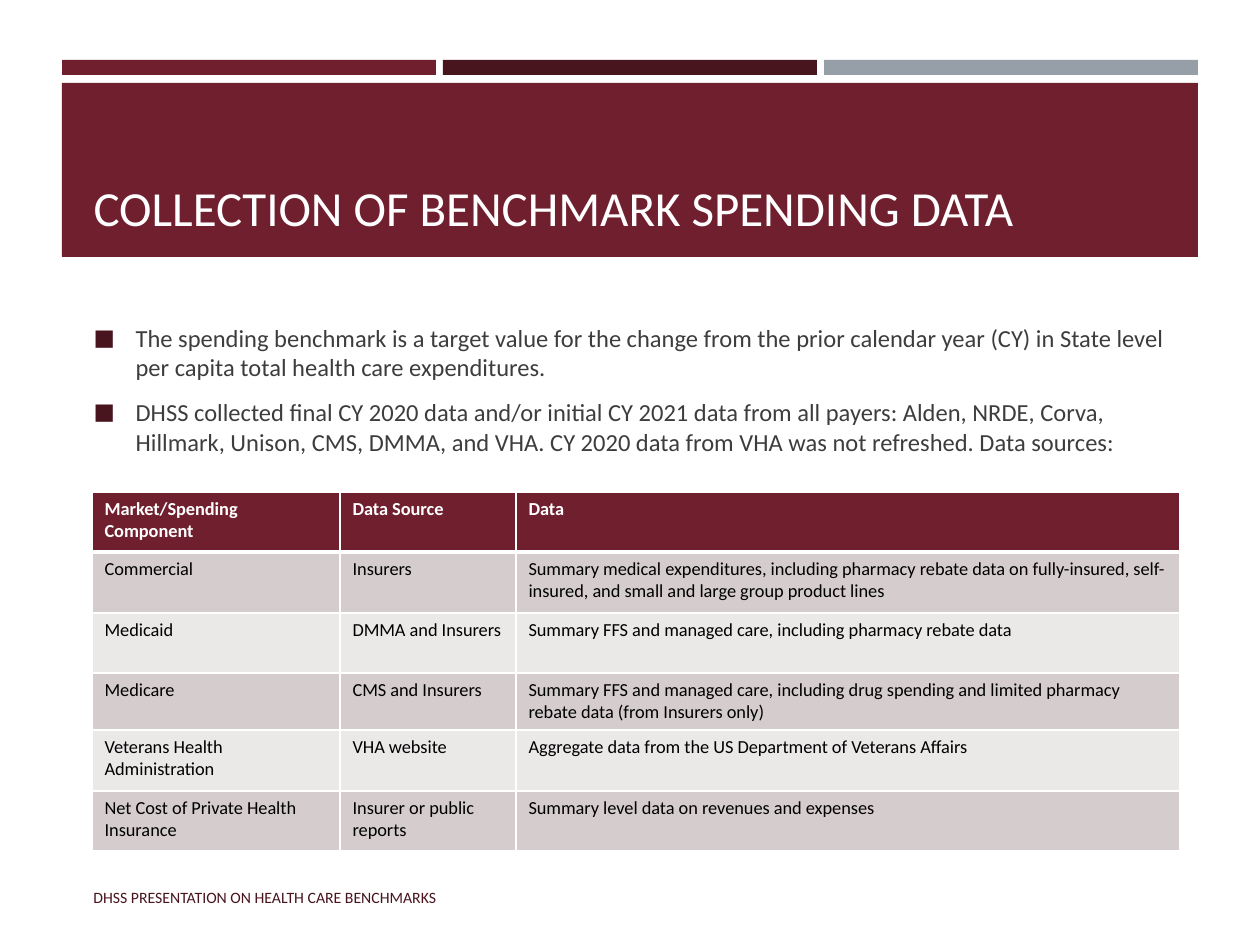
"""Build the slide on collection of benchmark spending data."""
from typing import NamedTuple

from lxml.etree import SubElement as Sub
from pptx import Presentation
from pptx.dml.color import RGBColor as Rgb
from pptx.enum.shapes import MSO_SHAPE as Kind
from pptx.enum.text import MSO_ANCHOR as Anchor, MSO_AUTO_SIZE as Fit, PP_ALIGN as Align
from pptx.oxml.ns import qn
from pptx.util import Emu, Pt

HUES = {
    "wine": "6F1F2E", "dark": "48141E", "gray": "969FA7", "white": "FFFFFF",
    "ink": "3D3D3D", "black": "000000", "odd": "D5CDCD", "even": "EBE8E8",
}
FONT = "Calibri"
LEFT, WIDE, GAP, BAR = 62, 1136, 7, 374
COLS = (248, 176, 664)
ROWS = (60, 61, 60, 57, 61, 60)
POINTS = (
    "The spending benchmark is a target value for the change from the prior "
    "calendar year (CY) in State level per capita total health care expenditures.",
    "DHSS collected final CY 2020 data and/or initial CY 2021 data from all payers: "
    "Alden, NRDE, Corva, Hillmark, Unison, CMS, DMMA, and VHA. "
    "CY 2020 data from VHA was not refreshed. Data sources:",
)


class Box(NamedTuple):
    x: int
    y: int
    w: int
    h: int


class Source(NamedTuple):
    market: str
    origin: str
    data: str


TABLE = (
    Source("Market/Spending Component", "Data Source", "Data"),
    Source("Commercial", "Insurers",
           "Summary medical expenditures, including pharmacy rebate data on "
           "fully-insured, self-insured, and small and large group product lines"),
    Source("Medicaid", "DMMA and Insurers",
           "Summary FFS and managed care, including pharmacy rebate data"),
    Source("Medicare", "CMS and Insurers",
           "Summary FFS and managed care, including drug spending and limited "
           "pharmacy rebate data (from Insurers only)"),
    Source("Veterans Health Administration", "VHA website",
           "Aggregate data from the US Department of Veterans Affairs"),
    Source("Net Cost of Private Health Insurance", "Insurer or public reports",
           "Summary level data on revenues and expenses"),
)


def px(n: int) -> Emu:
    return Emu(round(n * 914400 / 126))


def tint(name: str) -> Rgb:
    return Rgb.from_string(HUES[name])


def place(shape, box: Box) -> None:
    shape.left, shape.top, shape.width, shape.height = map(px, box)


def bullet(para) -> None:
    props = para._p.get_or_add_pPr()
    props.set("marL", str(px(42)))
    props.set("indent", str(-px(42)))
    Sub(Sub(props, qn("a:buClr")), qn("a:srgbClr"), val=HUES["dark"])
    Sub(props, qn("a:buSzPct"), val="92000")
    Sub(props, qn("a:buFont"), typeface=FONT)
    Sub(props, qn("a:buChar"), char="■")


def write(frame, *texts: str, size: float, hue: str, bold: bool = False,
          anchor=Anchor.TOP, marks: bool = False, after: int = 0) -> None:
    frame.word_wrap = True
    frame.vertical_anchor = anchor
    for i, text in enumerate(texts):
        para = frame.add_paragraph() if i else frame.paragraphs[0]
        if marks:
            bullet(para)
        para.alignment = Align.LEFT
        para.space_before = Pt(0.2 * size if i else 0)
        para.space_after = Pt(after)
        run = para.add_run()
        run.text = text
        font = run.font
        font.name, font.size, font.bold = FONT, Pt(size), bold
        font.color.rgb = tint(hue)


def band(slide, box: Box, hue: str) -> None:
    shape = slide.shapes.add_shape(Kind.RECTANGLE, *map(px, box))
    shape.shadow.inherit = False
    shape.fill.solid()
    shape.fill.fore_color.rgb = tint(hue)
    shape.line.fill.background()
    slide.shapes.title.element.addprevious(shape.element)


def edge(cell, top: int, base: int) -> None:
    props = cell._tc.get_or_add_tcPr()
    for side, width in (("L", 1), ("R", 1), ("T", top), ("B", base)):
        line = Sub(props, qn(f"a:ln{side}"), w=str(Pt(width)))
        Sub(Sub(line, qn("a:solidFill")), qn("a:srgbClr"), val=HUES["white"])


def grid(slide, box: Box) -> None:
    table = slide.shapes.add_table(len(ROWS), len(COLS), *map(px, box)).table
    for col, width in zip(table.columns, COLS):
        col.width = px(width)
    for i, (row, height, source) in enumerate(zip(table.rows, ROWS, TABLE)):
        row.height = px(height)
        head = i == 0
        fill = "wine" if head else "odd" if i % 2 else "even"
        for cell, text in zip(row.cells, source):
            edge(cell, top=3 if i == 1 else 1, base=3 if head else 1)
            cell.fill.solid()
            cell.fill.fore_color.rgb = tint(fill)
            write(cell.text_frame, text, size=10.5, bold=head,
                  hue="white" if head else "black")


def main() -> None:
    deck = Presentation()
    deck.slide_width, deck.slide_height = px(1260), px(945)
    slide = deck.slides.add_slide(deck.slide_layouts[1])

    for i, hue in enumerate(("wine", "dark", "gray")):
        band(slide, Box(LEFT + i * (BAR + GAP), 60, BAR, 15), hue)
    band(slide, Box(LEFT, 83, WIDE, 174), "wine")

    title, body = slide.shapes.title, slide.placeholders[1]
    place(title, Box(81, 95, 1101, 148))
    place(body, Box(81, -81, 1101, 941))
    for shape in (title, body):
        shape.text_frame.auto_size = Fit.NONE
    write(title.text_frame, "COLLECTION OF BENCHMARK SPENDING DATA",
          size=28, hue="white", anchor=Anchor.BOTTOM)
    write(body.text_frame, *POINTS, size=14, hue="ink",
          anchor=Anchor.MIDDLE, marks=True, after=6)

    foot = slide.shapes.add_textbox(*map(px, Box(81, 872, 672, 50)))
    write(foot.text_frame, "DHSS PRESENTATION ON HEALTH CARE BENCHMARKS",
          size=9, hue="dark", anchor=Anchor.MIDDLE)
    grid(slide, Box(92, 492, sum(COLS), sum(ROWS)))
    deck.save("out.pptx")


if __name__ == "__main__":
    main()
